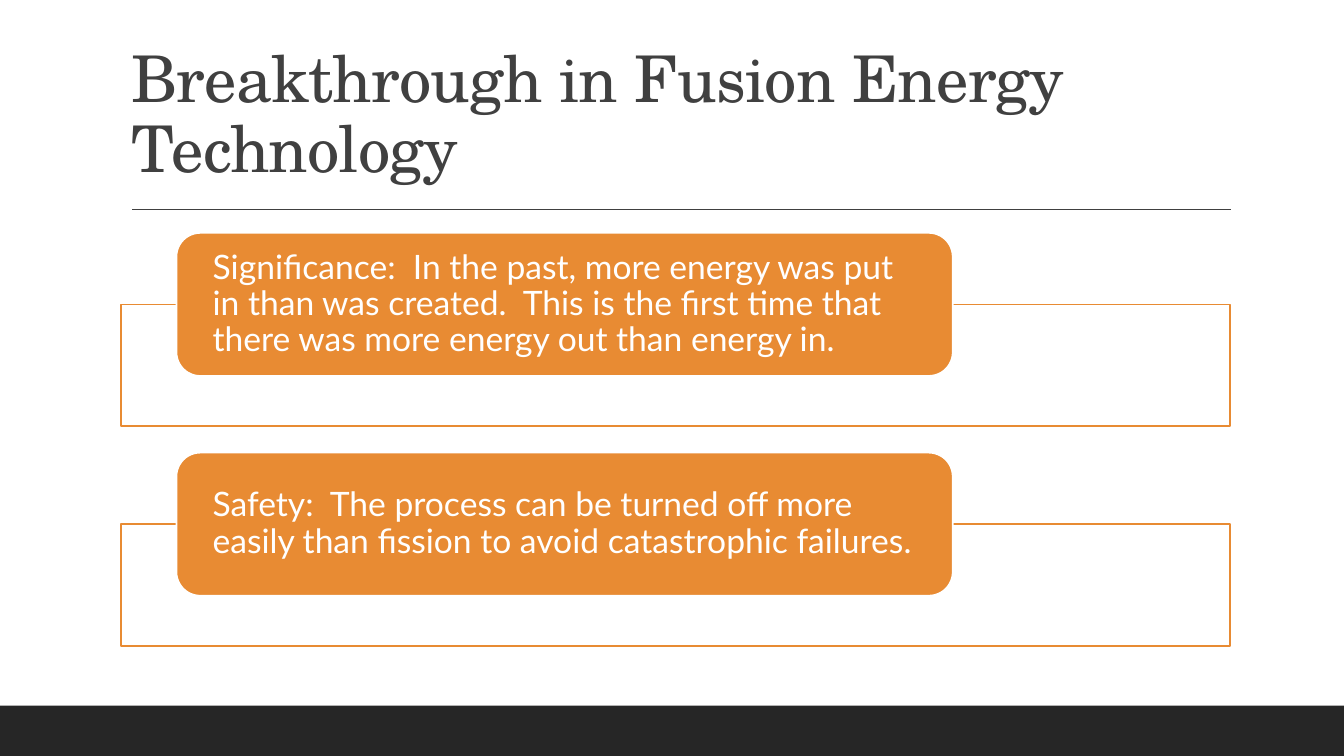
"""Build a slide on the significance and safety of fusion energy."""
from lxml import etree
from pptx import Presentation
from pptx.dml.color import RGBColor
from pptx.enum import shapes, text
from pptx.oxml import ns
from pptx.util import Inches, Pt

TITLE = "Breakthrough in Fusion Energy Technology"
POINTS = [
    "Significance:  In the past, more energy was put in than was created.  "
    "This is the first time that there was more energy out than energy in.",
    "Safety:  The process can be turned off more easily than fission "
    "to avoid catastrophic failures.",
]
WHITE, ORANGE, GRAY, BLACK = "FFFFFF", "E88B33", "404040", "262626"
LEFT, WIDTH = 1.2, 11
FIRST_TOP, PITCH = 2.31, 2.18
FRAME_DROP = 0.71


def paint(color_format, color):
    color_format.rgb = RGBColor.from_string(color)


def add_box(slide, kind, place, fill, line=None):
    box = slide.shapes.add_shape(kind, *map(Inches, place))
    box.shadow.inherit = False
    box.fill.solid()
    paint(box.fill.fore_color, fill)
    if line:
        paint(box.line.color, line)
        box.line.width = Pt(1.25)
    else:
        box.line.fill.background()
    return box


def write(frame, words, font, size, color, anchor):
    frame.word_wrap = True
    frame.auto_size = text.MSO_AUTO_SIZE.NONE
    frame.vertical_anchor = anchor
    paragraph = frame.paragraphs[0]
    paragraph.alignment = text.PP_ALIGN.LEFT
    paragraph.line_spacing = 0.9
    run = paragraph.add_run()
    run.text = words
    run.font.name = font
    run.font.size = Pt(size)
    paint(run.font.color, color)
    return run


def add_rule(slide):
    rule = slide.shapes.add_connector(
        shapes.MSO_CONNECTOR.STRAIGHT, *map(Inches, (1.31, 2.08, 12.21, 2.08)))
    paint(rule.line.color, GRAY)
    rule.line.width = Pt(1)
    etree.SubElement(rule._element.spPr, ns.qn("a:effectLst"))


def add_point(slide, top, words):
    frame = add_box(slide, shapes.MSO_SHAPE.RECTANGLE,
                    (LEFT, top + FRAME_DROP, WIDTH, 1.21), WHITE, ORANGE)
    fill_color = frame._element.spPr.find(ns.qn("a:solidFill"))[0]
    etree.SubElement(fill_color, ns.qn("a:alpha"), val="90000")
    label = add_box(slide, shapes.MSO_SHAPE.ROUNDED_RECTANGLE,
                    (LEFT + 0.55, top, 7.7, 1.42), ORANGE, WHITE)
    body = label.text_frame
    body.margin_left = body.margin_right = Inches(0.29)
    body.margin_top = body.margin_bottom = 0
    write(body, words, "Lato", 24, WHITE, text.MSO_ANCHOR.MIDDLE)


def main():
    deck = Presentation()
    deck.slide_width, deck.slide_height = Inches(13.33), Inches(7.5)
    slide = deck.slides.add_slide(deck.slide_layouts[5])

    add_box(slide, shapes.MSO_SHAPE.RECTANGLE, (0, 7, 13.33, 0.5), BLACK)
    add_rule(slide)

    title = slide.shapes.title
    title.left, title.top, title.width, title.height = map(
        Inches, (LEFT, 0.31, WIDTH, 1.59))
    heading = write(title.text_frame, TITLE, "TeX Gyre Schola", 46, GRAY,
                    text.MSO_ANCHOR.BOTTOM)
    heading.font._element.set("spc", "-50")

    for row, words in enumerate(POINTS):
        add_point(slide, FIRST_TOP + row * PITCH, words)

    deck.save("out.pptx")


if __name__ == "__main__":
    main()
